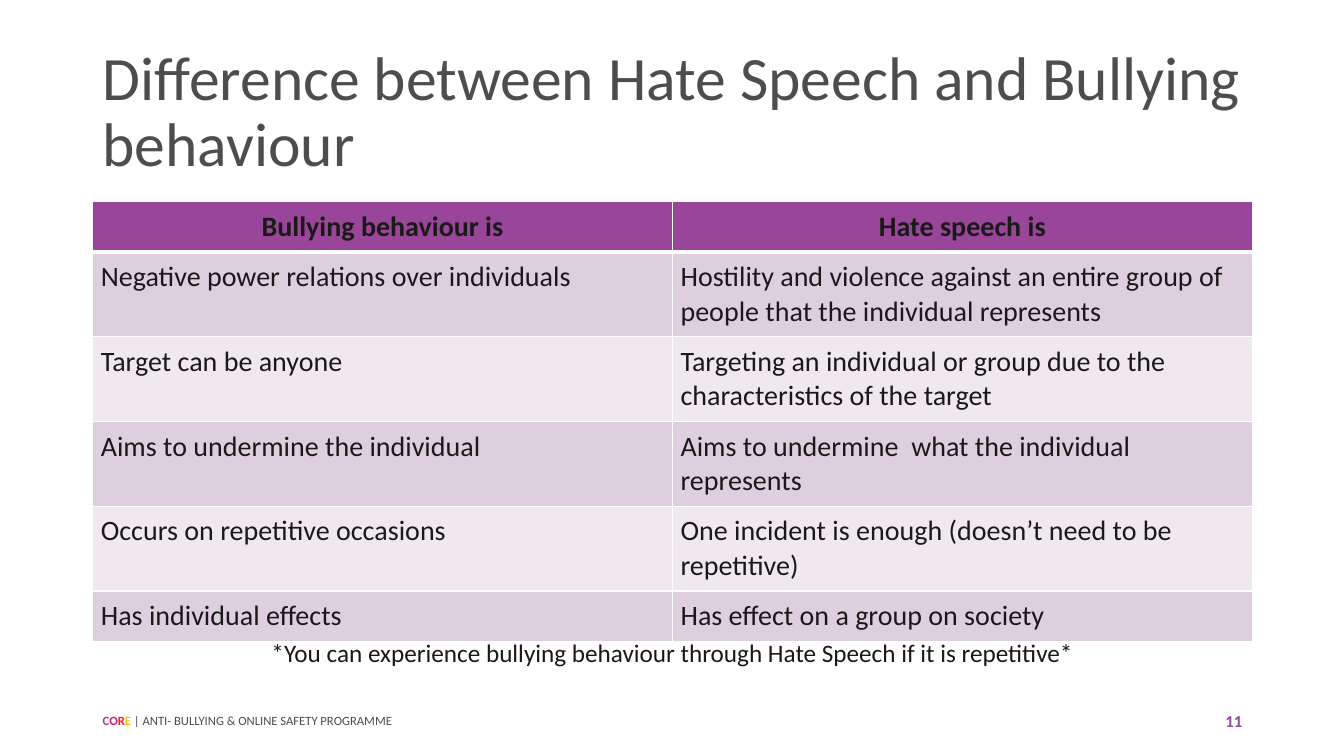
from dataclasses import dataclass

import pptx
import pptx.dml.color
import pptx.enum.text
import pptx.oxml.ns
import pptx.util
from lxml import etree

Inches = pptx.util.Inches
Align = pptx.enum.text.PP_ALIGN
Anchor = pptx.enum.text.MSO_ANCHOR

PURPLE, INK, GREY, WHITE = "99459A", "1A1918", "4C4D4C", "FFFFFF"
BANDS = ("DECFDE", "EFE9EF")
LEFT, WIDTH = 0.92, 11.5
INSET = 0.08


@dataclass
class Run:
    text: str
    color: str
    bold: bool = False


@dataclass
class Box:
    left: float
    top: float
    width: float
    height: float
    size: int
    runs: list[Run]
    align: Align = Align.LEFT
    anchor: Anchor = Anchor.MIDDLE
    lines: float = 1.0


BOXES = [
    # Title
    Box(LEFT, 0.4, WIDTH, 1.45, 44,
        [Run("Difference between Hate Speech and Bullying behaviour", GREY)],
        lines=0.9),
    # Page number
    Box(9.42, 6.95, 3, 0.4, 12, [Run("11", PURPLE, True)], Align.RIGHT),
    # Footer
    Box(LEFT, 6.95, 4.5, 0.4, 9,
        [Run("C", PURPLE, True), Run("O", "DB156F", True),
         Run("R", "ED1C27", True), Run("E ", "FFC000", True),
         Run("| ANTI- BULLYING & ONLINE SAFETY PROGRAMME", GREY)]),
    # Note under the table
    Box(LEFT, 6.27, WIDTH, 0.71, 18,
        [Run("*You can experience bullying behaviour through Hate Speech "
             "if it is repetitive*", INK)],
        Align.CENTER, Anchor.TOP),
]

ROWS = [
    ("Bullying behaviour is", "Hate speech is"),
    ("Negative power relations over individuals",
     "Hostility and violence against an entire group of people "
     "that the individual represents"),
    ("Target can be anyone",
     "Targeting an individual or group due to the characteristics "
     "of the target"),
    ("Aims to undermine the individual",
     "Aims to undermine  what the individual represents"),
    ("Occurs on repetitive occasions",
     "One incident is enough (doesn’t need to be repetitive)"),
    ("Has individual effects", "Has effect on a group on society"),
]
HEIGHTS = [0.49] + [0.83] * 4 + [0.49]


def rgb(code: str) -> pptx.dml.color.RGBColor:
    return pptx.dml.color.RGBColor.from_string(code)


def add_run(para, run: Run, size: int) -> None:
    part = para.add_run()
    part.text = run.text
    style = {"name": "Calibri", "size": pptx.util.Pt(size), "bold": run.bold}
    for key, value in style.items():
        setattr(part.font, key, value)
    part.font.color.rgb = rgb(run.color)


def draw_box(slide, box: Box) -> None:
    place = [Inches(n) for n in (box.left, box.top, box.width, box.height)]
    frame = slide.shapes.add_textbox(*place).text_frame
    frame.word_wrap = True
    frame.vertical_anchor = box.anchor
    para = frame.paragraphs[0]
    para.alignment = box.align
    para.line_spacing = box.lines
    for run in box.runs:
        add_run(para, run, box.size)


def add_edge(cell, side: str, points: int) -> None:
    tag = pptx.oxml.ns.qn
    props = cell._tc.get_or_add_tcPr()
    line = etree.SubElement(props, tag(f"a:ln{side}"),
                            w=str(pptx.util.Pt(points)))
    fill = etree.SubElement(line, tag("a:solidFill"))
    etree.SubElement(fill, tag("a:srgbClr"), val=WHITE)


def draw_cell(cell, text: str, row: int, col: int) -> None:
    head = row == 0
    for side in "LRTB":
        thick = (row, side) in ((0, "B"), (1, "T"))
        add_edge(cell, side, 3 if thick else 1)
    cell.fill.solid()
    cell.fill.fore_color.rgb = rgb(PURPLE if head else BANDS[(row - 1) % 2])
    for side in ("left", "right", "top", "bottom"):
        setattr(cell, f"margin_{side}", Inches(INSET))
    para = cell.text_frame.paragraphs[0]
    if head:
        para.alignment = Align.CENTER
    elif col == 0 and row > 1:
        para.alignment = Align.JUSTIFY
    add_run(para, Run(text, INK, head), 20)


def draw_table(slide) -> None:
    place = [Inches(n) for n in (LEFT, 2, WIDTH, sum(HEIGHTS))]
    table = slide.shapes.add_table(len(ROWS), 2, *place).table
    for row, (texts, height) in enumerate(zip(ROWS, HEIGHTS)):
        table.rows[row].height = Inches(height)
        for col, text in enumerate(texts):
            draw_cell(table.cell(row, col), text, row, col)


def main() -> None:
    deck = pptx.Presentation()
    deck.slide_width, deck.slide_height = Inches(13.33), Inches(7.5)
    slide = deck.slides.add_slide(deck.slide_layouts[6])
    draw_table(slide)
    for box in BOXES:
        draw_box(slide, box)
    deck.save("out.pptx")


if __name__ == "__main__":
    main()
